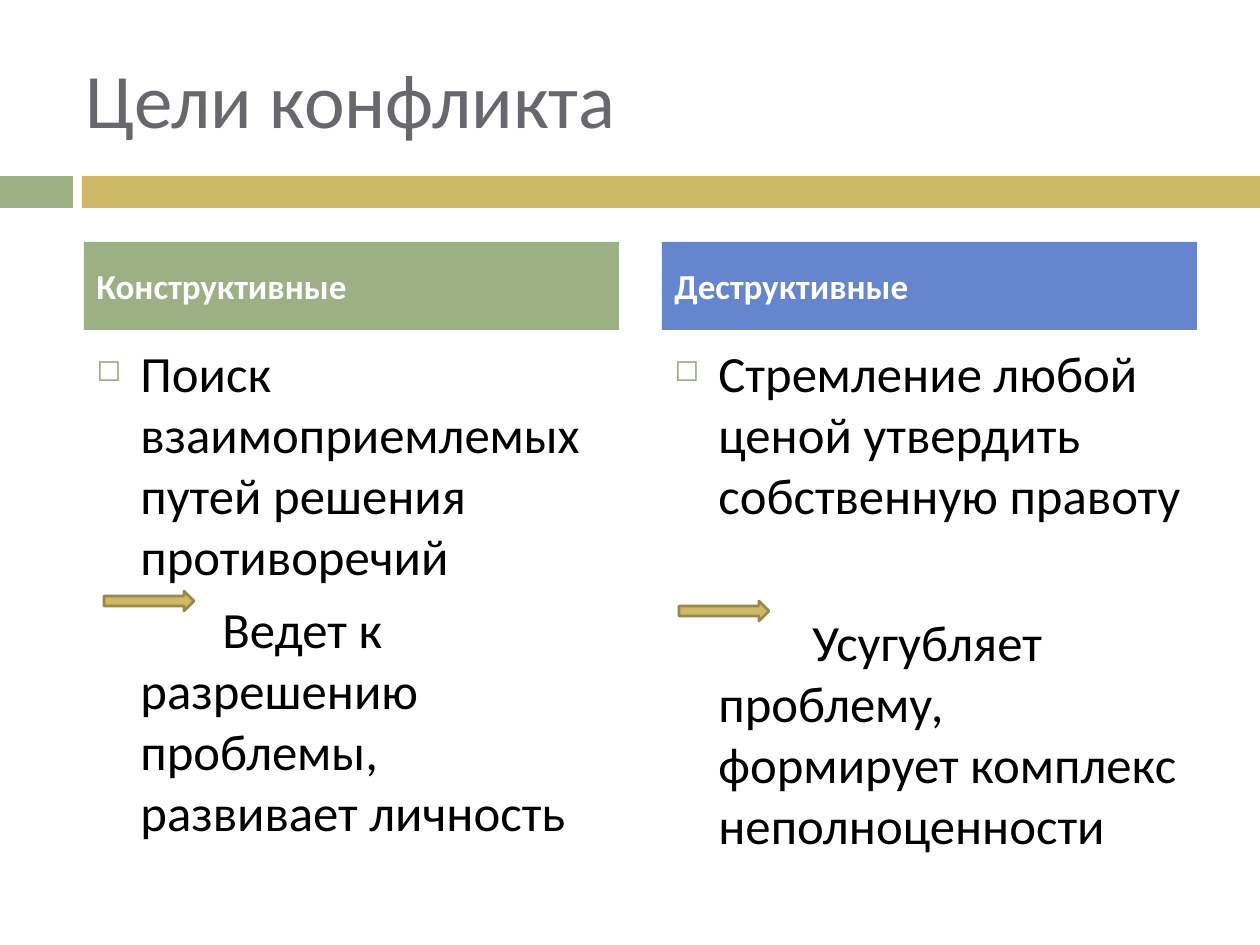
from lxml import etree
from pptx import Presentation
from pptx import util as u
from pptx.dml.color import RGBColor
from pptx.enum import shapes, text
from pptx.oxml.ns import qn

PX = 914400 / 126
FONT = "Calibri"
COLORS = {
    "title": "69676D", "body": "000000", "white": "FFFFFF",
    "green": "9CB084", "gold": "CEB966", "blue": "6585CF", "outline": "98894B",
}
COLUMN_WIDTH = 535
HANGING = 44
COLUMNS = [
    {"left": 84, "color": "green", "heading": "Конструктивные",
     "goal": "Поиск взаимоприемлемых путей решения противоречий",
     "result": "Ведет к разрешению проблемы, развивает личность",
     "first_line": 82, "space": 7, "arrow": (104, 591)},
    {"left": 662, "color": "blue", "heading": "Деструктивные",
     "goal": "Стремление любой ценой утвердить собственную правоту",
     "result": "Усугубляет проблему, формирует комплекс неполноценности",
     "first_line": 94, "space": 49, "arrow": (679, 601)},
]


def px(value):
    return u.Emu(round(value * PX))


def color(name):
    return RGBColor.from_string(COLORS[name])


def write(paragraph, words, size, fill, bold=False, space=0, margin=0, indent=0):
    paragraph.alignment = text.PP_ALIGN.LEFT
    paragraph.space_before = u.Pt(space)
    properties = paragraph._p.get_or_add_pPr()
    properties.set("marL", str(px(margin)))
    properties.set("indent", str(px(indent)))
    run = paragraph.add_run()
    run.text = words
    run.font.name = FONT
    run.font.size = u.Pt(size)
    run.font.bold = bold
    run.font.color.rgb = color(fill)


def add_bullet(paragraph):
    properties = paragraph._p.get_or_add_pPr()
    bullet_color = etree.SubElement(properties, qn("a:buClr"))
    etree.SubElement(bullet_color, qn("a:srgbClr"), val=COLORS["green"])
    etree.SubElement(properties, qn("a:buSzPct"), val="60000")
    etree.SubElement(properties, qn("a:buChar"), char="◻")


def add_block(slide, kind, box, fill, line=None):
    shape = slide.shapes.add_shape(kind, *map(px, box))
    shape.shadow.inherit = False
    shape.fill.solid()
    shape.fill.fore_color.rgb = color(fill)
    if line:
        shape.line.color.rgb = color(line)
        shape.line.width = u.Pt(1.5)
    else:
        shape.line.fill.background()
    return shape


def add_title(slide, words):
    title = slide.shapes.title
    title.left, title.top, title.width, title.height = map(px, (73, 38, 1124, 119))
    title.text_frame.vertical_anchor = text.MSO_ANCHOR.MIDDLE
    write(title.text_frame.paragraphs[0], words, 44, "title")


def add_column(slide, column):
    left = column["left"]
    # Heading band
    heading = add_block(slide, shapes.MSO_SHAPE.RECTANGLE,
                        (left, 242, COLUMN_WIDTH, 88), column["color"])
    heading.text_frame.vertical_anchor = text.MSO_ANCHOR.MIDDLE
    write(heading.text_frame.paragraphs[0], column["heading"], 20, "white",
          bold=True, space=7)
    # Goal and its result
    body = slide.shapes.add_textbox(*map(px, (left, 336, COLUMN_WIDTH, 494)))
    frame = body.text_frame
    frame.word_wrap = True
    goal = frame.paragraphs[0]
    write(goal, column["goal"], 29, "body", space=7, margin=HANGING, indent=-HANGING)
    add_bullet(goal)
    write(frame.add_paragraph(), column["result"], 29, "body",
          space=column["space"], margin=HANGING, indent=column["first_line"])
    # Arrow leading to the result
    add_block(slide, shapes.MSO_SHAPE.RIGHT_ARROW, (*column["arrow"], 90, 20),
              "gold", line="outline")


def main():
    presentation = Presentation()
    presentation.slide_width, presentation.slide_height = px(1260), px(945)
    slide = presentation.slides.add_slide(presentation.slide_layouts[5])
    # Divider under the title
    add_block(slide, shapes.MSO_SHAPE.RECTANGLE, (0, 176, 73, 32), "green")
    add_block(slide, shapes.MSO_SHAPE.RECTANGLE, (82, 176, 1178, 32), "gold")
    add_title(slide, "Цели конфликта")
    for column in COLUMNS:
        add_column(slide, column)
    presentation.save("out.pptx")


if __name__ == "__main__":
    main()
